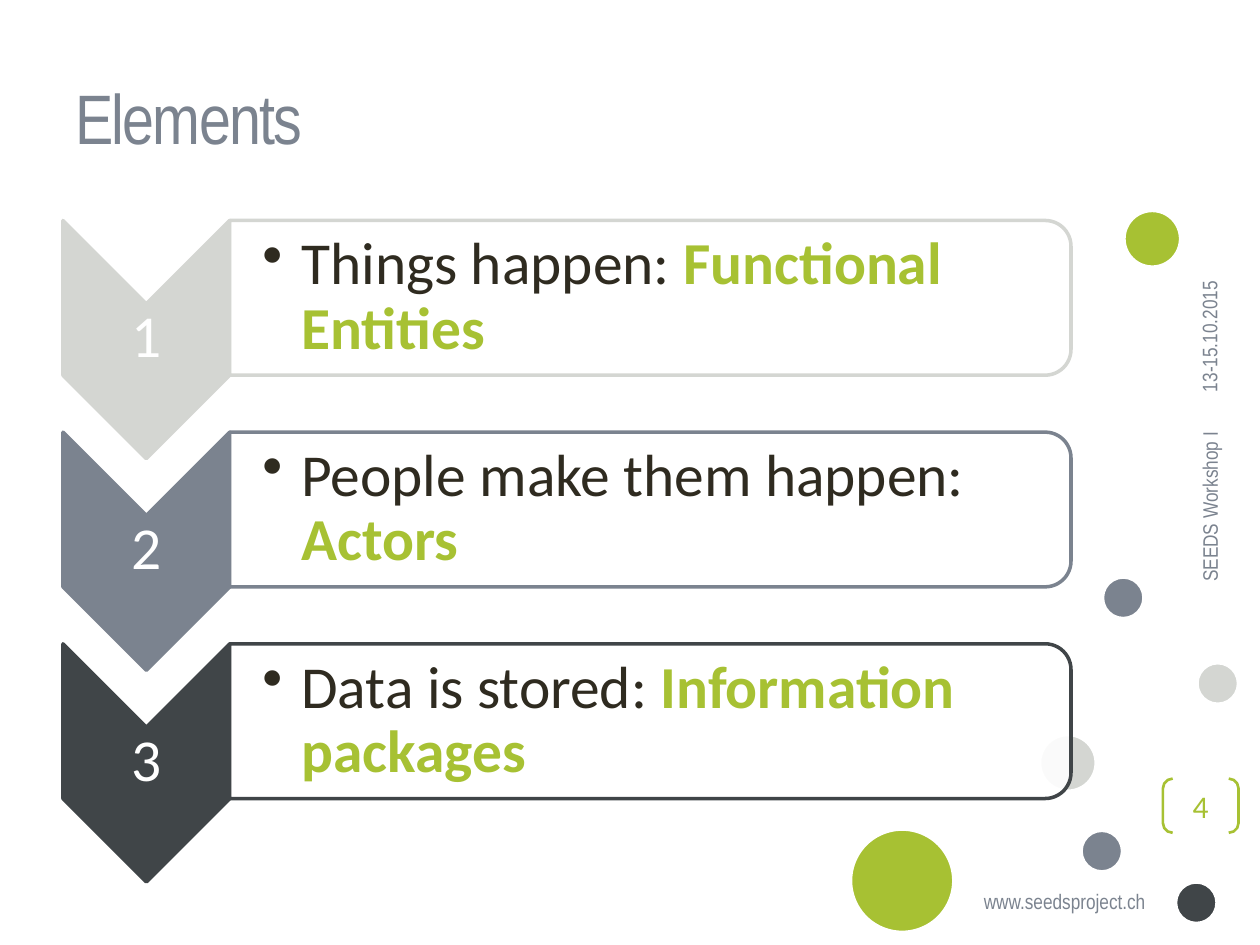
from lxml.etree import SubElement
from pptx import Presentation
from pptx.dml.color import RGBColor
from pptx.enum.shapes import MSO_SHAPE as SHAPE
from pptx.enum.text import MSO_ANCHOR as ANCHOR, PP_ALIGN as ALIGN
from pptx.oxml.ns import qn
from pptx.util import Inches, Pt

GREEN, SLATE, DARK, PALE = "A7C133", "7B838F", "404548", "D4D6D2"
WHITE, INK = "FFFFFF", "2F2B20"
NARROW, BODY = "Arial Narrow", "Calibri"


def rgb(value):
    return RGBColor.from_string(value)


def turned(box, rotation):
    x, y, w, h = box
    if rotation in (90, 270):
        return x + (w - h) / 2, y + (h - w) / 2, h, w
    return box


def add_shape(s, kind, box, fill, line, width=2, rotation=0, alpha=None):
    sp = s.shapes.add_shape(kind, *map(Inches, turned(box, rotation)))
    sp.rotation = rotation
    sp.shadow.inherit = False
    if fill:
        sp.fill.solid()
        sp.fill.fore_color.rgb = rgb(fill)
        if alpha:
            color = sp.fill._xPr.find(qn("a:solidFill"))[0]
            SubElement(color, qn("a:alpha"), val=str(alpha * 1000))
    else:
        sp.fill.background()
    sp.line.color.rgb = rgb(line)
    sp.line.width = Pt(width)
    return sp


def set_insets(tf, left, rest):
    tf.margin_left = Inches(left)
    tf.margin_top = tf.margin_right = tf.margin_bottom = Inches(rest)


def add_run(p, text, size, font, color, bold=False):
    r = p.add_run()
    r.text = text
    r.font.size, r.font.name, r.font.bold = Pt(size), font, bold
    r.font.color.rgb = rgb(color)
    return r


def add_box(s, box, anchor=ANCHOR.MIDDLE, align=ALIGN.LEFT, rotation=0, wrap=True):
    sp = s.shapes.add_textbox(*map(Inches, turned(box, rotation)))
    sp.rotation = rotation
    tf = sp.text_frame
    tf.word_wrap, tf.vertical_anchor = wrap, anchor
    p = tf.paragraphs[0]
    p.alignment = align
    return tf, p


def add_bullet(p, indent):
    pPr = p._p.get_or_add_pPr()
    pPr.set("marL", str(Inches(indent)))
    pPr.set("indent", str(-Inches(indent)))
    SubElement(pPr, qn("a:buChar"), char="•")


def add_dots(s):
    for x, y, size, color in (
        (6.75, 6.58, 0.82, GREEN),
        (8.92, 1.67, 0.45, GREEN),
        (9.33, 7, 0.33, DARK),
        (8.25, 5.83, 0.45, PALE),
        (9.5, 5.26, 0.33, PALE),
        (8.58, 6.59, 0.33, SLATE),
        (8.75, 4.58, 0.33, SLATE),
    ):
        add_shape(s, SHAPE.OVAL, (x, y, size, size), color, WHITE)


def add_title(s, box):
    _, p = add_box(s, box)
    r = add_run(p, "Elements", 40, NARROW, SLATE)
    r._r.get_or_add_rPr().set("spc", "-100")


def add_margin_notes(s):
    _, p = add_box(s, (7.71, 7, 1.54, 0.3), ANCHOR.TOP, wrap=False)
    add_run(p, "www.seedsproject.ch", 12, NARROW, SLATE)
    for box, text, align in (
        ((9.42, 3.33, 0.36, 1.75), "SEEDS Workshop I", ALIGN.RIGHT),
        ((9.43, 1.92, 0.33, 1.29), "13-15.10.2015", ALIGN.LEFT),
    ):
        _, p = add_box(s, box, align=align, rotation=270)
        add_run(p, text, 12, NARROW, SLATE)


def add_page_number(s, box):
    sp = add_shape(s, SHAPE.DOUBLE_BRACKET, box, None, GREEN, 1.5)
    sp.adjustments[0] = 0.18
    tf = sp.text_frame
    set_insets(tf, 0, 0)
    tf.vertical_anchor = ANCHOR.MIDDLE
    p = tf.paragraphs[0]
    p.alignment = ALIGN.CENTER
    add_run(p, "4", 18, BODY, GREEN)


def add_step(s, box, number, lead, term, color):
    x, y, w, h = box
    arrow_w = 0.7 * h
    bar_x, bar_w, bar_h = x + arrow_w, w - arrow_w, 0.65 * h

    add_shape(s, SHAPE.CHEVRON, (x, y, arrow_w, h), color, color, rotation=90)
    tf, p = add_box(s, (x, y + 0.35 * h, arrow_w, 0.3 * h), ANCHOR.TOP, ALIGN.CENTER)
    set_insets(tf, 0.02, 0.02)
    p.line_spacing = 0.9
    add_run(p, number, 34, BODY, WHITE)

    add_shape(s, SHAPE.ROUND_2_SAME_RECTANGLE, (bar_x, y, bar_w, bar_h),
              WHITE, color, rotation=90, alpha=90)
    tf, p = add_box(s, (bar_x, y + 0.06, bar_w - 0.06, bar_h - 0.12))
    set_insets(tf, 0.26, 0.02)
    p.line_spacing = 0.9
    add_bullet(p, 0.31)
    add_run(p, lead, 34, BODY, INK)
    add_run(p, term, 34, BODY, GREEN, bold=True)


def add_steps(s, box, steps, pitch):
    x, y, w, h = box
    for i, (lead, term, color) in enumerate(steps):
        add_step(s, (x, y + i * pitch, w, h), str(i + 1), lead, term, color)


def main():
    prs = Presentation()
    prs.slide_width, prs.slide_height = Inches(10), Inches(7.5)
    s = prs.slides.add_slide(prs.slide_layouts[6])
    add_dots(s)
    add_margin_notes(s)
    add_page_number(s, (9.23, 6.18, 0.6, 0.43))
    add_title(s, (0.5, 0.3, 8, 1.25))
    add_steps(s, (0.5, 1.75, 8, 1.89), (
        ("Things happen: ", "Functional Entities", PALE),
        ("People make them happen: ", "Actors", SLATE),
        ("Data is stored: ", "Information packages", DARK),
    ), 1.68)
    prs.save("out.pptx")


if __name__ == "__main__":
    main()
